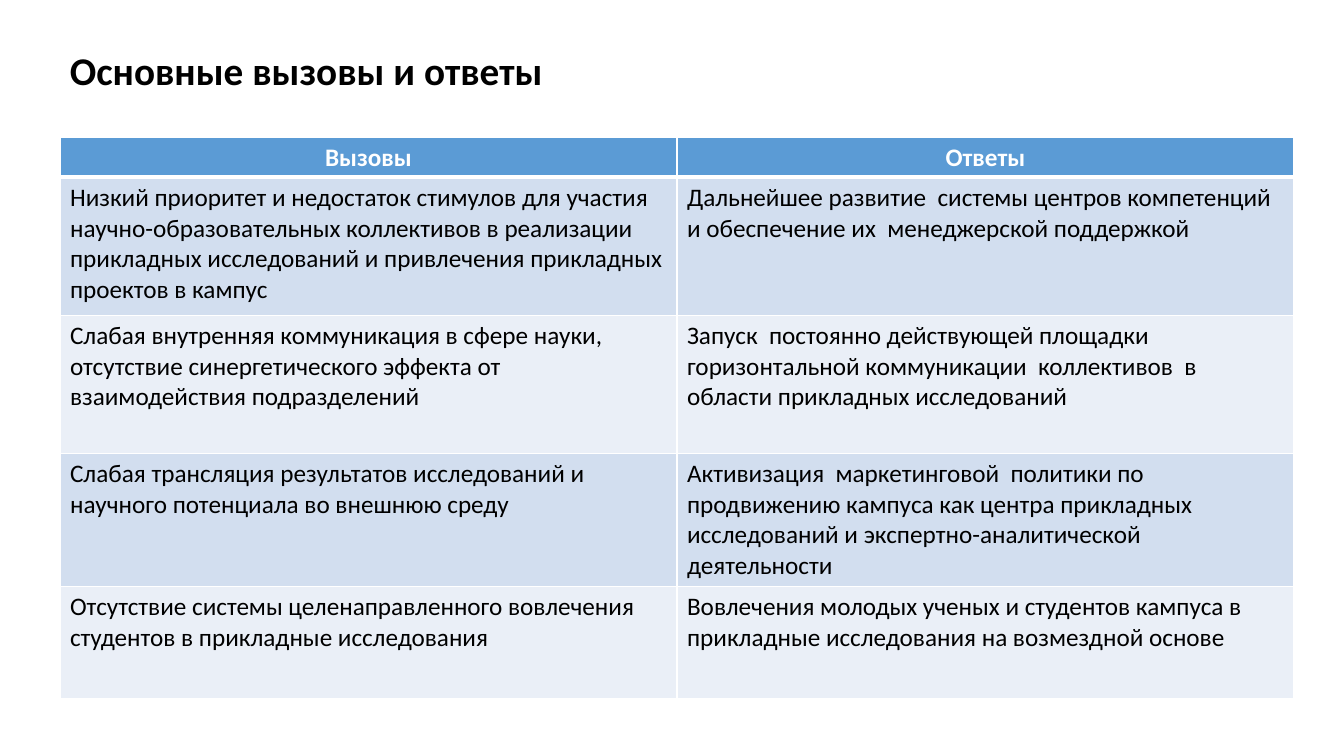
"""Build a slide with a table of main challenges and responses."""
from pptx import Presentation
from pptx.dml.color import RGBColor
from pptx.enum.text import MSO_ANCHOR as ANCHOR, PP_ALIGN as ALIGN
from pptx.oxml import parse_xml
from pptx.oxml.ns import nsdecls
from pptx.util import Emu, Pt

BLACK = RGBColor(0x00, 0x00, 0x00)
WHITE = RGBColor(0xFF, 0xFF, 0xFF)
HEADER = RGBColor(0x5B, 0x9B, 0xD5)
BANDS = [RGBColor(0xEA, 0xEF, 0xF7), RGBColor(0xD2, 0xDE, 0xEF)]

LEFT, WIDTH = 60, 1234
ROW_HEIGHTS = [40, 138, 138, 133, 112]
ROWS = [
    ("Вызовы", "Ответы"),
    ("Низкий приоритет и недостаток стимулов для участия научно-образовательных коллективов "
     "в реализации прикладных исследований и привлечения прикладных проектов в кампус",
     "Дальнейшее развитие  системы центров компетенций и обеспечение их  менеджерской поддержкой"),
    ("Слабая внутренняя коммуникация в сфере науки, отсутствие синергетического эффекта "
     "от взаимодействия подразделений",
     "Запуск  постоянно действующей площадки  горизонтальной коммуникации  коллективов  "
     "в области прикладных исследований"),
    ("Слабая трансляция результатов исследований и научного потенциала во внешнюю среду",
     "Активизация  маркетинговой  политики по продвижению кампуса как центра прикладных "
     "исследований и экспертно-аналитической деятельности"),
    ("Отсутствие системы целенаправленного вовлечения студентов в прикладные исследования",
     "Вовлечения молодых ученых и студентов кампуса в прикладные исследования "
     "на возмездной основе"),
]


def px(n):
    return Emu(round(n * 914400 / 100.8))


def write(tf, text, size=18, color=BLACK, bold=False, align=ALIGN.LEFT):
    p = tf.paragraphs[0]
    p.alignment = align
    r = p.add_run()
    r.text = text
    r.font.name = "Calibri"
    r.font.size = Pt(size)
    r.font.bold = bold
    r.font.color.rgb = color


prs = Presentation()
prs.slide_width, prs.slide_height = px(1344), px(756)
s = prs.slides.add_slide(prs.slide_layouts[6])

tf = s.shapes.add_textbox(px(LEFT), px(40), px(WIDTH), px(60)).text_frame
tf.word_wrap = True
tf.vertical_anchor = ANCHOR.MIDDLE
write(tf, "Основные вызовы и ответы", size=28, bold=True)

table = s.shapes.add_table(len(ROWS), 2, px(LEFT), px(137),
                           px(WIDTH), px(sum(ROW_HEIGHTS))).table
for col in table.columns:
    col.width = px(WIDTH // 2)

for i, (height, texts) in enumerate(zip(ROW_HEIGHTS, ROWS)):
    table.rows[i].height = px(height)
    for j, text in enumerate(texts):
        cell = table.cell(i, j)
        if i == 0:
            write(cell.text_frame, text, color=WHITE, bold=True, align=ALIGN.CENTER)
        else:
            write(cell.text_frame, text)
        tcPr = cell._tc.get_or_add_tcPr()
        for side in "LRTB":
            thick = (i, side) in ((0, "B"), (1, "T"))
            tcPr.append(parse_xml(
                f'<a:ln{side} {nsdecls("a")} w="{Pt(3 if thick else 1)}">'
                f'<a:solidFill><a:srgbClr val="{WHITE}"/></a:solidFill></a:ln{side}>'))
        cell.fill.solid()
        cell.fill.fore_color.rgb = BANDS[i % 2] if i else HEADER

prs.save("out.pptx")
